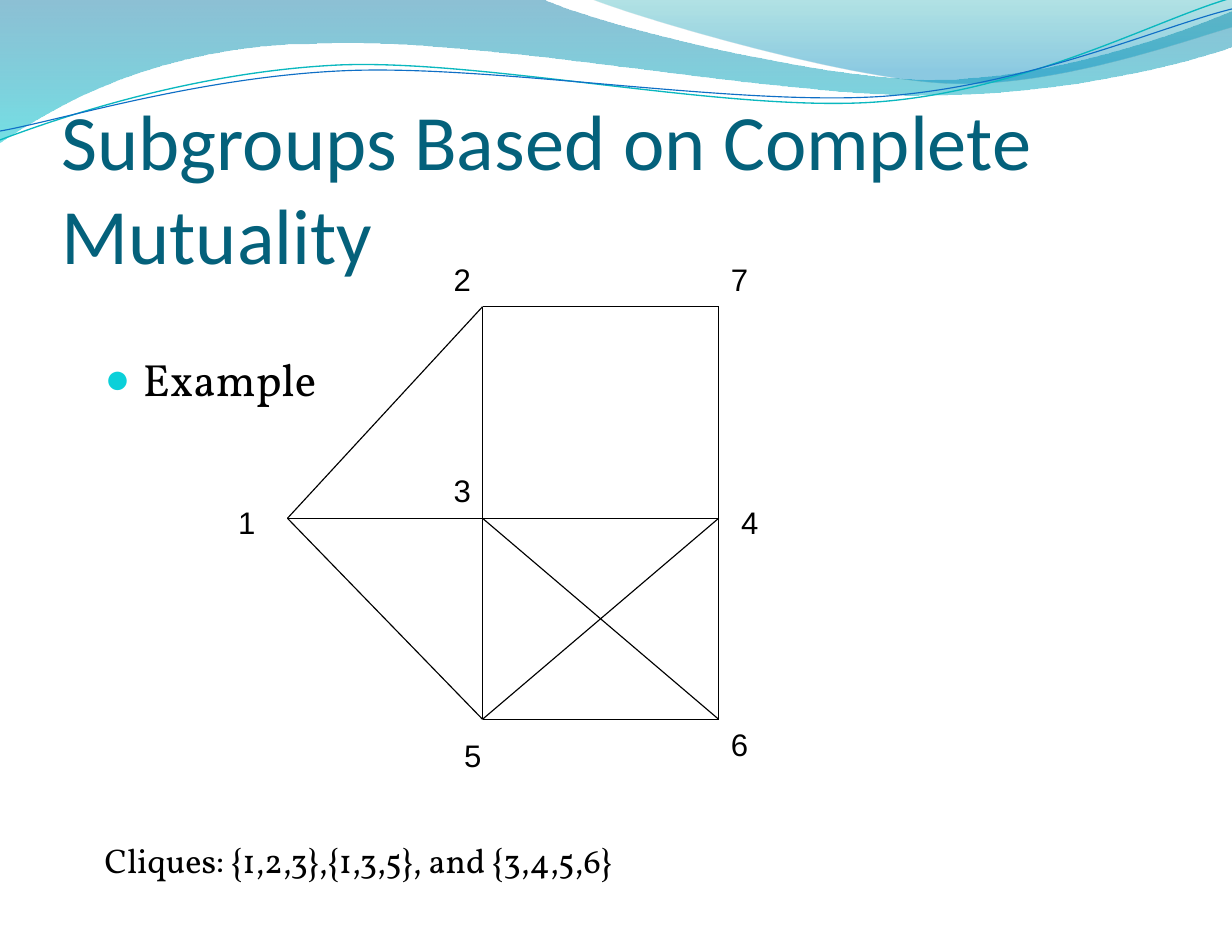
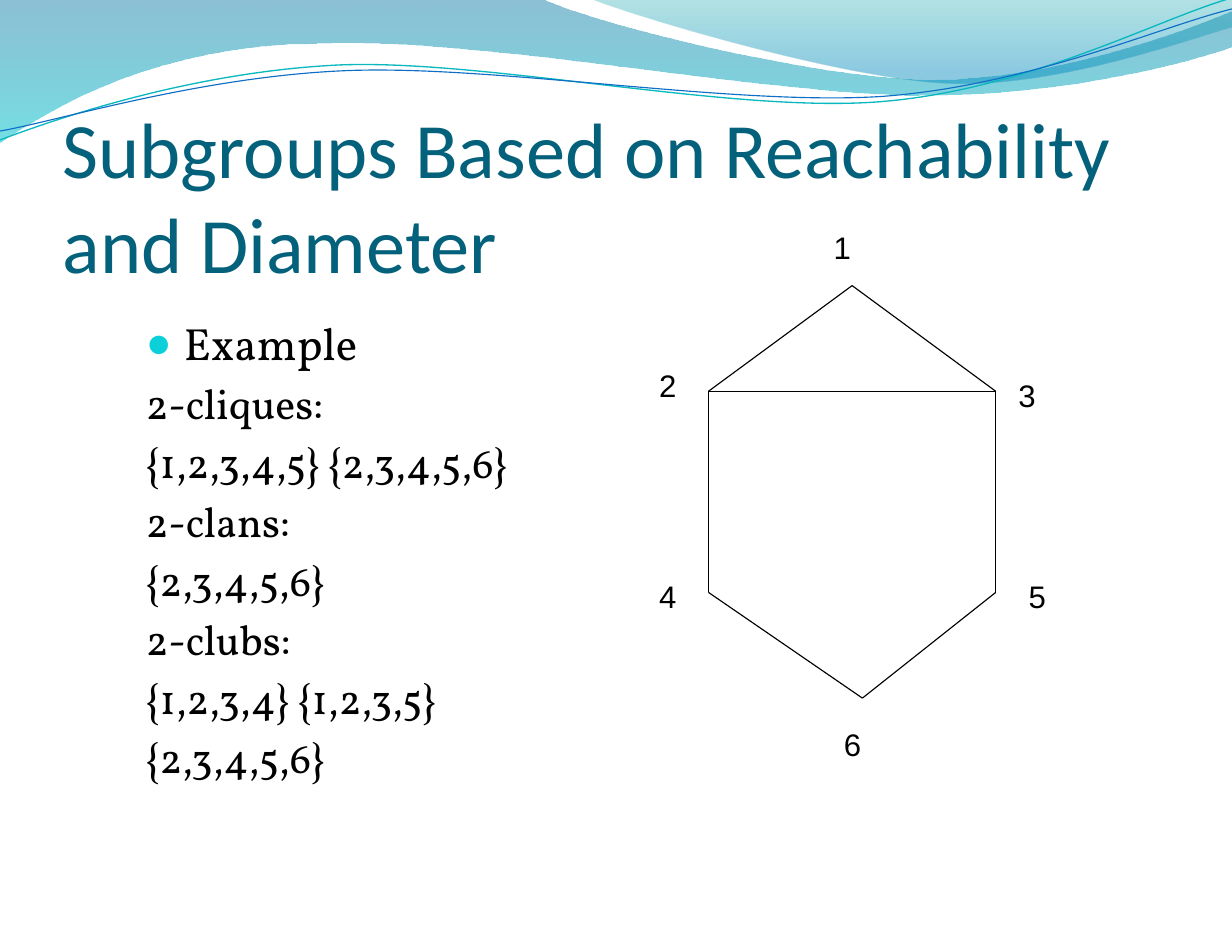
"""Build two slides on cohesive subgroups, each with a small graph and its cliques."""
from lxml.etree import SubElement
from pptx import Presentation
from pptx.dml.color import RGBColor
from pptx.enum.shapes import MSO_CONNECTOR
from pptx.enum.text import MSO_ANCHOR, MSO_AUTO_SIZE, PP_ALIGN
from pptx.oxml.ns import qn
from pptx.util import Inches, Pt

COLORS = {"title": "04617B", "ink": "000000", "bullet": "0BD0D9"}
TITLE_FONT, BODY_FONT, LABEL_FONT = "Calibri", "Vollkorn", "Arial"
COLUMNS, ROWS = 120, 90
LABEL_COLUMNS, LABEL_ROWS = 5, 4.75

WAVES = [
    {"start": (0, 0),
     "segments": [(4.84, -0.01), (5.23, 0.19, 7.3, 0.71, 8.34, 0.71),
                  (9.38, 0.71, 10.54, 0.29, 11, 0.1), (11.01, 0.41),
                  (10.82, 0.5, 9.57, 0.86, 8.2, 0.85),
                  (6.84, 0.85, 4.2, 0.32, 2.83, 0.39),
                  (1.42, 0.4, 0.5, 0.94, -0.01, 1.28)],
     "stops": [(0, "0074A1", 45), (1, "00C6CF", 55)]},
    {"start": (5.27, -0.01),
     "segments": [(5.6, 0.13, 7.5, 0.7, 8.46, 0.74),
                  (9.41, 0.78, 10.58, 0.36, 11, 0.24), (11, 0)],
     "stops": [(0, "00A1A9", 30), (0.8, "008BBF", 45)]},
    {"start": (0, 1.25),
     "segments": [(0.53, 1.05, 1.73, 0.64, 3.04, 0.58),
                  (4.35, 0.53, 6.52, 1.01, 7.84, 0.91),
                  (9.16, 0.81, 10.32, 0.18, 10.97, -0.01)],
     "line": ("0AB8BF", 0.85)},
    {"start": (0, 1.17),
     "segments": [(0.52, 1.08, 1.8, 0.68, 3.11, 0.63),
                  (4.43, 0.58, 6.57, 0.95, 7.89, 0.86),
                  (9.2, 0.76, 10.35, 0.24, 11, 0.08)],
     "line": ("0F6FC6", 0.75)},
]

SLIDES = [
    {"title": "Subgroups Based on Complete Mutuality",
     "title_box": (6, 19, 103, 7.5),
     "body_box": (9, 32.6, 105, 57),
     "body": [("Example", 29, None),
              ("Cliques: {1,2,3},{1,3,5}, and {3,4,5,6}", 22, 279)],
     "nodes": {1: (28, 49), 2: (47, 29), 3: (47, 49), 4: (70, 49),
               5: (47, 68), 6: (70, 68), 7: (70, 29)},
     "labels": {1: (22, 47), 2: (43, 24), 3: (43, 44), 4: (71, 47),
                5: (44, 69), 6: (70, 68), 7: (70, 24)},
     "edges": [(2, 7), (2, 3), (3, 4), (7, 4), (3, 5), (5, 6),
               (6, 4), (3, 1), (1, 2), (1, 5), (3, 6), (5, 4)]},
    {"title": "Subgroups Based on Reachability and Diameter",
     "title_box": (6.1, 18.3, 112, 9),
     "body_box": (13, 29.2, 45, 59),
     "body": [("Example", 29, None)] + [(entry, 27, None) for entry in (
         "2-cliques:", "{1,2,3,4,5} {2,3,4,5,6}", "2-clans:", "{2,3,4,5,6}",
         "2-clubs:", "{1,2,3,4} {1,2,3,5}", "{2,3,4,5,6}")],
     "nodes": {1: (83, 27), 2: (69, 37), 3: (97, 37),
               4: (69, 56), 5: (97, 56), 6: (84, 66)},
     "labels": {1: (80, 21), 2: (63, 34), 3: (98, 35),
                4: (63, 54), 5: (99, 54), 6: (81, 68)},
     "edges": [(1, 2), (2, 4), (4, 6), (6, 5), (1, 3), (3, 5), (2, 3)]},
]

deck = Presentation()
deck.slide_width, deck.slide_height = Inches(11), Inches(8.5)
layout = deck.slide_layouts[1]
side_margin, edge_margin = deck.slide_width // 100, deck.slide_height // 150
hanging = Inches(0.34)


def on_grid(*lengths):
    """Turn alternating columns and rows into slide lengths."""
    units = (deck.slide_width / COLUMNS, deck.slide_height / ROWS)
    return [round(length * units[i % 2]) for i, length in enumerate(lengths)]


def style_text(paragraph, font_name, size, color):
    """Set the font of a whole paragraph and align it left."""
    paragraph.alignment = PP_ALIGN.LEFT
    paragraph.font.name, paragraph.font.size = font_name, Pt(size)
    paragraph.font.color.rgb = RGBColor.from_string(COLORS[color])


for number, content in enumerate(SLIDES):
    slide = deck.slides.add_slide(layout)

    for wave in WAVES if number == 0 else []:
        points = [(Inches(x), Inches(y)) for segment in wave["segments"]
                  for x, y in zip(segment[::2], segment[1::2])]
        builder = slide.shapes.build_freeform(*[Inches(n) for n in wave["start"]])
        builder.add_line_segments(points, close="stops" in wave)
        ribbon = builder.convert_to_shape()
        ribbon.shadow.inherit = False

        outline = ribbon.element.find(".//" + qn("a:path"))
        strokes = iter(outline.findall(qn("a:lnTo")))
        for segment in wave["segments"]:
            curve, *rest = [next(strokes) for _ in segment[::2]]
            if rest:
                curve.tag = qn("a:cubicBezTo")
            for stroke in rest:
                curve.append(stroke[0])
                outline.remove(stroke)

        if "stops" in wave:
            ribbon.line.fill.background()
            ribbon.fill.gradient()
            ribbon.fill.gradient_angle = 270
            for stop, (position, color, _) in zip(ribbon.fill.gradient_stops, wave["stops"]):
                stop.position = position
                stop.color.rgb = RGBColor.from_string(color)
            for tint, (_, _, opacity) in zip(ribbon.element.spPr.iter(qn("a:srgbClr")), wave["stops"]):
                SubElement(tint, qn("a:alpha"), val=str(opacity * 1000))
        else:
            color, width = wave["line"]
            ribbon.fill.background()
            ribbon.line.color.rgb = RGBColor.from_string(color)
            ribbon.line.width = Pt(width)
        layout.shapes.element.append(ribbon.element)

    title, body = slide.shapes.title, slide.placeholders[1]
    for holder, box in ((title, "title_box"), (body, "body_box")):
        holder.left, holder.top, holder.width, holder.height = on_grid(*content[box])
        frame = holder.text_frame
        frame.auto_size, frame.word_wrap = MSO_AUTO_SIZE.NONE, True
        frame.margin_left = frame.margin_right = 0 if box == "title_box" else side_margin
        frame.margin_top = edge_margin
        frame.margin_bottom = 0 if box == "title_box" else edge_margin
    title.text_frame.vertical_anchor = MSO_ANCHOR.BOTTOM
    title.text_frame.text = content["title"]
    style_text(title.text_frame.paragraphs[0], TITLE_FONT, 50.4, "title")

    body.text_frame.text = "\n".join(entry for entry, _, _ in content["body"])
    for paragraph, (entry, size, gap) in zip(body.text_frame.paragraphs, content["body"]):
        style_text(paragraph, BODY_FONT, size, "ink")
        if gap:
            paragraph.space_before = Pt(gap)
        properties = paragraph._p.get_or_add_pPr()
        properties.set("marL", str(hanging))
        properties.set("indent", str(-hanging))
        if entry == "Example":
            bullet_color = properties.makeelement(qn("a:buClr"))
            SubElement(bullet_color, qn("a:srgbClr"), val=COLORS["bullet"])
            marks = [bullet_color,
                     properties.makeelement(qn("a:buSzPct"), {"val": "95000"}),
                     properties.makeelement(qn("a:buChar"), {"char": "●"})]
        else:
            marks = [properties.makeelement(qn("a:buNone"))]
        defaults = properties.find(qn("a:defRPr"))
        for mark in marks:
            defaults.addprevious(mark)

    for start, end in content["edges"]:
        edge = slide.shapes.add_connector(
            MSO_CONNECTOR.STRAIGHT,
            *on_grid(*content["nodes"][start], *content["nodes"][end]))
        edge.line.color.rgb = RGBColor.from_string(COLORS["ink"])
        edge.line.width = Pt(0.75)
        SubElement(edge.element.spPr, qn("a:effectLst"))

    for node, corner in content["labels"].items():
        label = slide.shapes.add_textbox(*on_grid(*corner, LABEL_COLUMNS, LABEL_ROWS))
        frame = label.text_frame
        frame.word_wrap = True
        frame.margin_left = frame.margin_right = side_margin
        frame.margin_top = frame.margin_bottom = edge_margin
        frame.text = str(node)
        style_text(frame.paragraphs[0], LABEL_FONT, 20, "ink")

deck.save("out.pptx")
